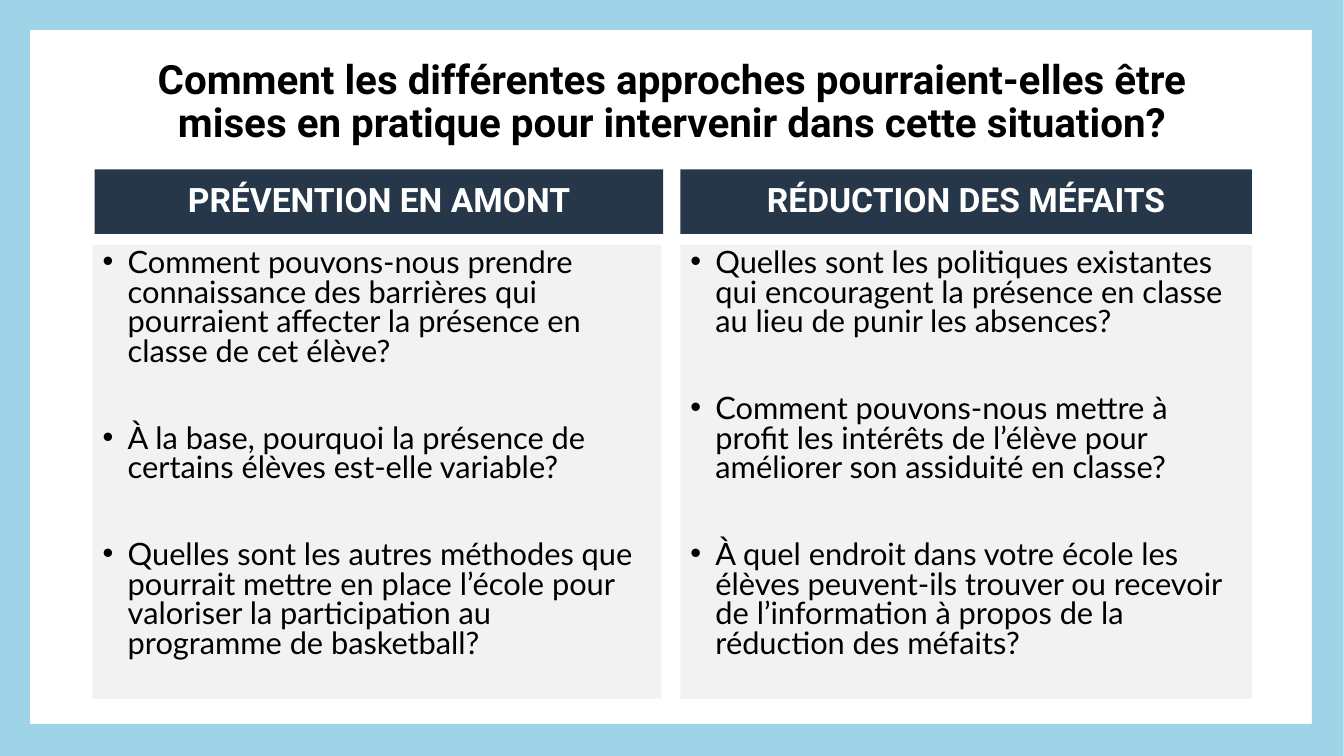
import pptx
import pptx.util
import pptx.dml.color
import pptx.enum.shapes
import pptx.enum.text
import pptx.oxml.xmlchemy

# Content
TITLE = ("Comment les différentes approches pourraient-elles être "
         "mises en pratique pour intervenir dans cette situation?")
COLUMNS = [
    {"head": "PRÉVENTION EN AMONT", "head_x": 67.7, "x": 66.2, "wide": 406.1,
     "items": [
         "Comment pouvons-nous prendre connaissance des barrières qui "
         "pourraient affecter la présence en classe de cet élève?",
         "À la base, pourquoi la présence de certains élèves est-elle variable?",
         "Quelles sont les autres méthodes que pourrait mettre en place l’école "
         "pour valoriser la participation au programme de basketball?"]},
    {"head": "RÉDUCTION DES MÉFAITS", "head_x": 486, "x": 486, "wide": 408.2,
     "items": [
         "Quelles sont les politiques existantes qui encouragent la présence "
         "en classe au lieu de punir les absences?",
         "Comment pouvons-nous mettre à profit les intérêts de l’élève pour "
         "améliorer son assiduité en classe?",
         "À quel endroit dans votre école les élèves peuvent-ils trouver ou "
         "recevoir de l’information à propos de la réduction des méfaits?"]},
]

# Format values
COLORS = {"navy": "26374A", "gray": "F2F2F2", "sky": "9FD4E8",
          "black": "000000", "white": "FFFFFF"}
Pt = pptx.util.Pt
KIND = pptx.enum.shapes.MSO_SHAPE
ALIGN = pptx.enum.text.PP_ALIGN
ANCHOR = pptx.enum.text.MSO_ANCHOR
STYLES = {
    "title": {"font": {"name": "Roboto", "size": Pt(28.8), "bold": True},
              "para": {"alignment": ALIGN.CENTER, "line_spacing": 0.9},
              "ink": "black", "anchor": ANCHOR.MIDDLE},
    "head": {"font": {"name": "Roboto", "size": Pt(24), "bold": True},
             "para": {"alignment": ALIGN.CENTER, "line_spacing": 0.9,
                      "space_before": Pt(10)},
             "ink": "white", "anchor": ANCHOR.MIDDLE},
    "list": {"font": {"name": "Lato", "size": Pt(22), "bold": False},
             "para": {"alignment": ALIGN.LEFT, "line_spacing": 0.8,
                      "space_before": Pt(10)},
             "ink": "black", "anchor": ANCHOR.TOP},
}
HEAD_Y, HEAD_H = 121, 46
LIST_Y, LIST_H = 175, 324
ITEM_GAP = 41  # space between two questions
INDENT = 18
EDGE = 1.4     # the frame starts just outside the slide


def rgb(name):
    return pptx.dml.color.RGBColor.from_string(COLORS[name])


def apply(target, values):
    for name, value in values.items():
        setattr(target, name, value)


def add_box(kind, box, fill):
    shape = slide.shapes.add_shape(kind, *map(Pt, box))
    shape.shadow.inherit = False
    shape.fill.solid()
    shape.fill.fore_color.rgb = rgb(fill)
    shape.line.fill.background()
    return shape


def add_bullet(para):
    props = para._p.get_or_add_pPr()
    props.set("marL", str(Pt(INDENT)))
    props.set("indent", str(-Pt(INDENT)))
    for tag, name, value in (("a:buFont", "typeface", "Arial"),
                             ("a:buChar", "char", "•")):
        part = pptx.oxml.xmlchemy.OxmlElement(tag)
        part.set(name, value)
        props.append(part)


def write(shape, lines, style):
    look = STYLES[style]
    frame = shape.text_frame
    apply(frame, {"word_wrap": True, "vertical_anchor": look["anchor"]})
    for i, line in enumerate(lines):
        para = frame.add_paragraph() if i else frame.paragraphs[0]
        apply(para, look["para"])
        if i:
            para.space_before = Pt(ITEM_GAP)
        if style == "list":
            add_bullet(para)
        run = para.add_run()
        run.text = line
        apply(run.font, look["font"])
        run.font.color.rgb = rgb(look["ink"])


# Slide
deck = pptx.Presentation()
apply(deck, {"slide_width": Pt(960), "slide_height": Pt(540)})
slide = deck.slides.add_slide(deck.slide_layouts[6])

# Title
title = slide.shapes.add_textbox(*map(Pt, (66.2, 41, 828, 64.8)))
write(title, [TITLE], "title")

# Columns: heading bar above a list panel
for col in COLUMNS:
    bar = add_box(KIND.RECTANGLE, (col["head_x"], HEAD_Y, col["wide"], HEAD_H), "navy")
    write(bar, [col["head"]], "head")
    panel = add_box(KIND.RECTANGLE, (col["x"], LIST_Y, col["wide"], LIST_H), "gray")
    write(panel, col["items"], "list")

# Border
border = add_box(KIND.FRAME, (-EDGE, -EDGE, 961.2, 541.4), "sky")
border.adjustments[0] = 0.042

deck.save("out.pptx")
